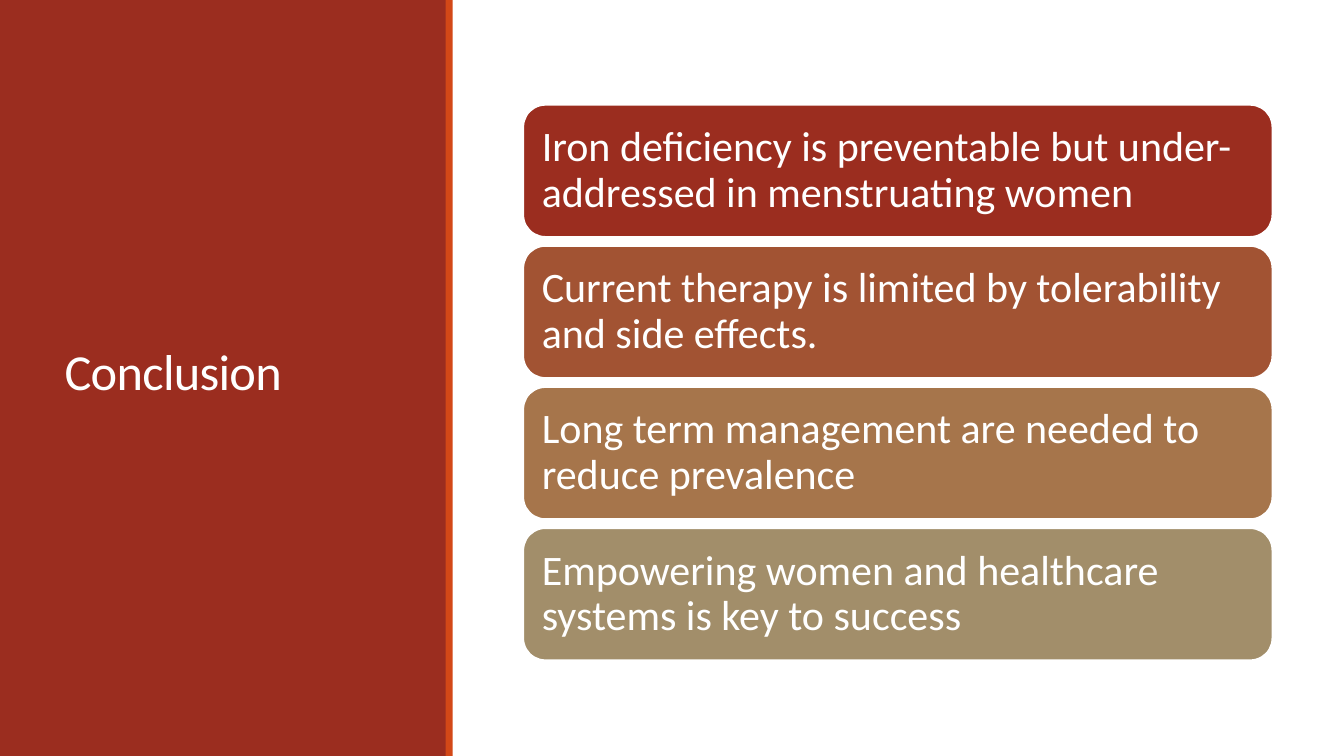
"""Build the conclusion slide: a title panel beside four stacked statement cards."""
from pptx import Presentation
from pptx import util as u
from pptx.dml.color import RGBColor
from pptx.enum import shapes, text

TITLE = "Conclusion"
STATEMENTS = [
    ("Iron deficiency is preventable but under-addressed in menstruating women", "brick"),
    ("Current therapy is limited by tolerability and side effects.", "rust"),
    ("Long term management are needed to reduce prevalence", "tan"),
    ("Empowering women and healthcare systems is key to success", "khaki"),
]
COLOURS = {
    "brick": "9B2D1F",
    "rust": "A25333",
    "tan": "A6754B",
    "khaki": "A28E6A",
    "orange": "D34817",
    "white": "FFFFFF",
}
FONT = "Calibri"
WIDTH, HEIGHT = 13.33, 7.5
PANEL = (0, 0, 4.43, HEIGHT)
STRIPE = (4.42, 0, 0.07, HEIGHT)
TITLE_BOX = (0.54, 0.57, 3.37, 6.31)
CARD_LEFT, CARD_TOP, CARD_WIDTH, CARD_HEIGHT = 5.19, 1.04, 7.43, 1.31
CARD_PITCH = 1.4
CARD_INSET = 0.12


def colour(name):
    return RGBColor.from_string(COLOURS[name])


def add_block(slide, kind, box, fill):
    shape = slide.shapes.add_shape(kind, *map(u.Inches, box))
    shape.shadow.inherit = False
    shape.fill.solid()
    shape.fill.fore_color.rgb = colour(fill)
    shape.line.fill.background()
    return shape


def write(shape, content, size, line_spacing):
    frame = shape.text_frame
    frame.text = content
    frame.word_wrap = True
    frame.auto_size = text.MSO_AUTO_SIZE.NONE
    frame.vertical_anchor = text.MSO_ANCHOR.MIDDLE
    paragraph = frame.paragraphs[0]
    paragraph.alignment = text.PP_ALIGN.LEFT
    paragraph.line_spacing = line_spacing
    paragraph.font.name = FONT
    paragraph.font.size = u.Pt(size)
    paragraph.font.color.rgb = colour("white")
    return frame


def add_title(slide):
    title = slide.shapes.title
    title.left, title.top, title.width, title.height = map(u.Inches, TITLE_BOX)
    frame = write(title, TITLE, 36, 0.85)
    frame.paragraphs[0].runs[0].font._element.set("spc", "-50")
    panel = add_block(slide, shapes.MSO_SHAPE.RECTANGLE, PANEL, "brick")
    title._element.addprevious(panel._element)
    add_block(slide, shapes.MSO_SHAPE.RECTANGLE, STRIPE, "orange")


def add_cards(slide):
    for row, (statement, fill) in enumerate(STATEMENTS):
        box = (CARD_LEFT, CARD_TOP + row * CARD_PITCH, CARD_WIDTH, CARD_HEIGHT)
        card = add_block(slide, shapes.MSO_SHAPE.ROUNDED_RECTANGLE, box, fill)
        card.line.color.rgb = colour("white")
        card.line.width = u.Pt(1.25)
        frame = write(card, statement, 30, 0.9)
        frame.margin_left = frame.margin_right = u.Inches(CARD_INSET)
        frame.margin_top = frame.margin_bottom = u.Inches(CARD_INSET)


def main():
    presentation = Presentation()
    presentation.slide_width = u.Inches(WIDTH)
    presentation.slide_height = u.Inches(HEIGHT)
    slide = presentation.slides.add_slide(presentation.slide_layouts.get_by_name("Title Only"))
    add_title(slide)
    add_cards(slide)
    presentation.save("out.pptx")


if __name__ == "__main__":
    main()
